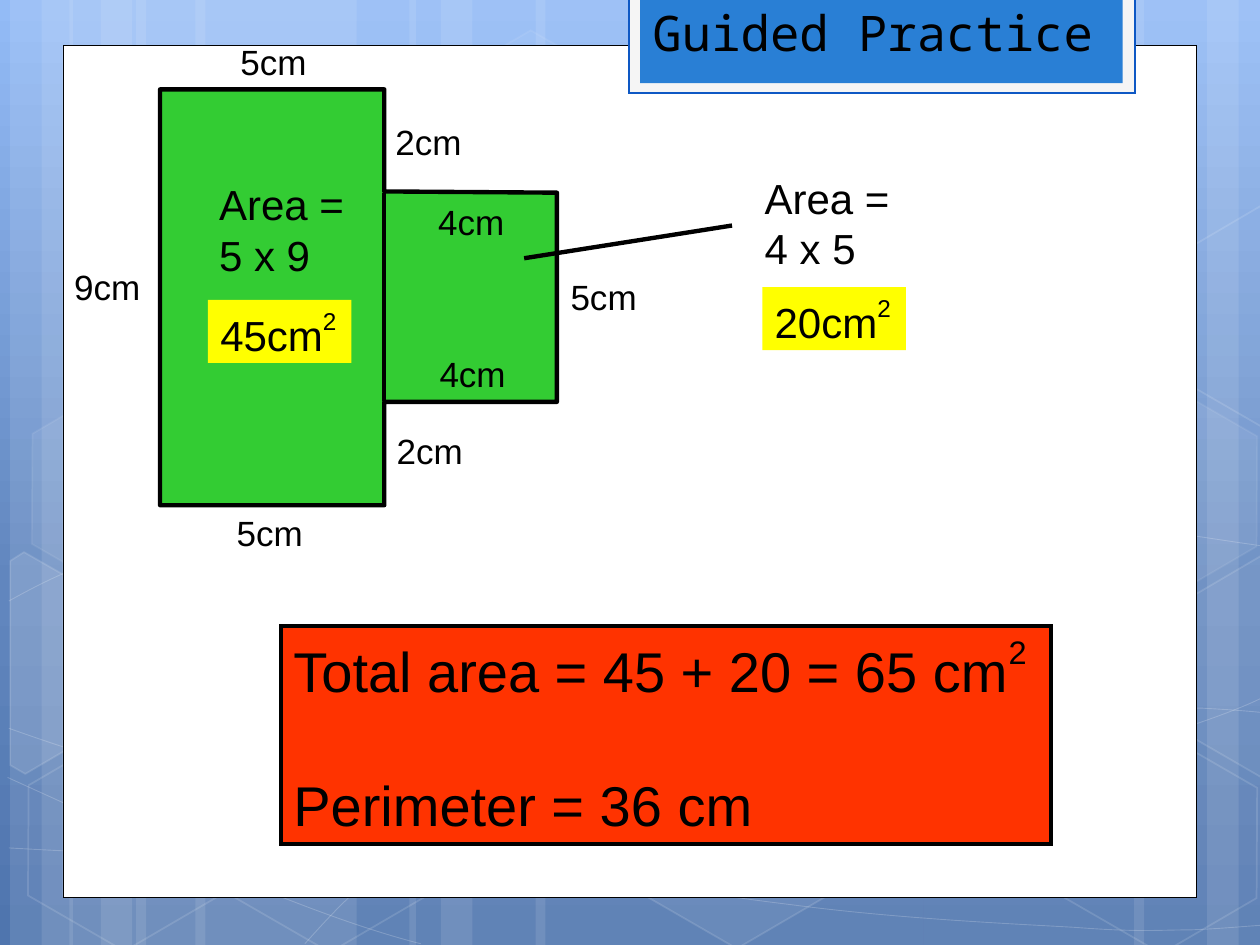
"""Build a guided practice slide on the area and perimeter of a compound figure."""
from copy import deepcopy
from math import cos, radians, sin

from lxml import etree
from pptx import Presentation
from pptx import util as u
from pptx.dml.color import RGBColor
from pptx.enum import shapes, text
from pptx.oxml.ns import qn

WHITE = RGBColor(0xFF, 0xFF, 0xFF)
BLACK = RGBColor(0, 0, 0)
PALE = RGBColor(0xF5, 0xF5, 0xF5)
EDGE_BLUE = RGBColor(0x0E, 0x58, 0xC4)
TITLE_BLUE = RGBColor(0x29, 0x7F, 0xD5)
GREEN = RGBColor(0x33, 0xCC, 0x33)
YELLOW = RGBColor(0xFF, 0xFF, 0)
RED = RGBColor(0xFF, 0x33, 0)
SKY = [(0, RGBColor(0x93, 0xBB, 0xF6)), (0.62, RGBColor(0x61, 0x86, 0xBE)),
       (1, RGBColor(0x4F, 0x75, 0xAE))]

BANDS = [(1.08, 1.75, 0), (0.08, 0.5, 0), (0.33, 0.83, 0), (1.55, 1.75, 0), (0.55, 0.5, 0),
         (0.8, 0.83, 0), (7.33, 1.75, 180), (9.58, 0.5, 180), (9, 0.83, 180),
         (4.25, 3.08, 0), (3.25, 0.5, 0), (3.5, 0.83, 0)]
WAVES = [
    [(0.07, 6.73), (0.61, 6.76), (1.15, 6.79), (1.9, 6.78), (2.65, 6.77), (3.58, 6.75),
     (4.58, 6.65), (5.58, 6.55), (7, 6.36), (7.92, 6.17), (8.83, 5.98), (9.77, 5.68),
     (10.07, 5.51)],
    [(0.07, 4.77), (0.36, 4.61), (0.65, 4.46), (1.21, 4.31), (1.78, 4.16), (2.59, 3.94),
     (3.47, 3.87), (4.36, 3.8), (5.44, 3.79), (6.54, 3.87), (7.64, 3.95), (9.47, 4.26),
     (10.07, 4.34)],
    [(0.06, 6.17), (1.27, 6.72), (2.47, 7.27), (3.34, 7.49)],
    [(0.07, 5.78), (0.38, 5.89), (0.7, 6), (1.28, 6.16), (1.86, 6.31), (2.73, 6.56),
     (3.57, 6.73), (4.4, 6.9), (5.45, 7.08), (6.28, 7.18), (7.11, 7.29), (8, 7.33),
     (8.53, 7.36), (9.05, 7.4), (9.19, 7.38), (9.45, 7.38), (9.71, 7.37), (9.89, 7.35),
     (10.07, 7.34)],
    [(2.42, 7.49), (2.6, 7.29), (2.78, 7.09), (3.02, 6.91), (3.26, 6.73), (3.6, 6.53),
     (3.88, 6.39), (4.16, 6.25), (4.33, 6.19), (4.7, 6.09), (5.06, 5.99), (5.73, 5.85),
     (6.08, 5.78), (6.44, 5.71), (6.49, 5.71), (6.8, 5.69), (7.11, 5.66), (7.6, 5.63),
     (7.94, 5.62), (8.29, 5.61), (8.86, 5.62), (8.86, 5.62), (9.08, 5.62), (9.31, 5.62),
     (9.53, 5.62), (9.71, 5.63), (9.88, 5.64), (10.06, 5.66)],
]
HEXAGONS = [(3.34, 0.36, 4, 8), (4.97, 5.89, 6, 12), (0.11, 5.91, None, 12),
            (0.14, 3.12, 7, 8), (1.74, 5.92, None, 12), (7.53, 4.53, 10, 12),
            (8.34, 5.93, None, 12), (8.34, 3.14, 7, 8)]
CUT_HEXAGONS = [
    ([(0.08, 4.45), (0.19, 4.38), (0.96, 4.82), (0.95, 5.7), (0.2, 6.14), (0.08, 6.07)],
     (0.36, 5.35), 10),
    ([(9.26, 4.85), (10.01, 4.41), (10.09, 4.46), (10.09, 6.13), (10.02, 6.17),
      (9.26, 5.73)], (9.85, 5.2), 4),
    ([(9.26, 2.07), (10.01, 1.63), (10.1, 1.68), (10.09, 3.35), (10.02, 3.39),
      (9.26, 2.95)], (9.85, 2.41), None),
]
FIGURE = [(1.27, 0.71), (1.27, 4.01), (3.05, 4.01), (3.05, 3.19), (4.42, 3.19),
          (4.42, 1.53), (3.05, 1.52), (3.05, 0.71)]
SIDES = [("9cm", 0.49, 2.06), ("5cm", 1.81, 0.27), ("5cm", 1.78, 4.01), ("2cm", 3.05, 3.36),
         ("4cm", 3.39, 2.75), ("5cm", 4.43, 2.14), ("4cm", 3.38, 1.54), ("2cm", 3.04, 0.91)]
AREAS = [("5 x 9", "45cm", (1.64, 1.37), (1.65, 2.38)),
         ("4 x 5", "20cm", (5.97, 1.32), (6.05, 2.28))]


def write(frame, lines, size=20, font="Arial", gap=0, wrap=False, inset=0.05):
    """Fill a frame with lines, raising whatever follows a caret."""
    frame.word_wrap = wrap
    frame.auto_size = text.MSO_AUTO_SIZE.NONE
    frame.vertical_anchor = text.MSO_ANCHOR.TOP
    frame.margin_top = u.Inches(inset)
    for i, line in enumerate(lines):
        row = frame.add_paragraph() if i else frame.paragraphs[0]
        row.alignment = text.PP_ALIGN.LEFT
        row.space_before = u.Pt(gap if i else 0)
        for raised, part in enumerate(line.split("^")):
            run = row.add_run()
            run.text = part
            run.font.size, run.font.name = u.Pt(size), font
            run.font.color.rgb = BLACK
            if raised:
                run.font._element.set("baseline", "50000")


def turn(points, center, degrees):
    """Turn points clockwise about a center."""
    c, s = cos(radians(degrees)), sin(radians(degrees))
    cx, cy = center
    return [(cx + (x - cx) * c - (y - cy) * s, cy + (x - cx) * s + (y - cy) * c)
            for x, y in points]


class Board:
    """The current slide and the style of its elements."""

    def __init__(self, slide):
        self.slide, self.items = slide, slide.shapes

    def backdrop(self, stops):
        fill = self.slide.background.fill
        fill.gradient()
        fill.gradient_angle = 270
        first = next(self.slide.element.iter(qn("a:gs")))
        first.addnext(deepcopy(first))
        for stop, (position, color) in zip(fill.gradient_stops, stops):
            stop.position, stop.color.rgb = position, color

    def paint(self, item, fill=None, line=None, width=1, fill_alpha=100, line_alpha=100):
        item.shadow.inherit = False
        for part, color, alpha in ((item.fill, fill, fill_alpha),
                                   (item.line.fill, line, line_alpha)):
            if color is None:
                part.background()
                continue
            part.solid()
            part.fore_color.rgb = color
            if alpha < 100:
                tint = part._xPr.find(qn("a:solidFill"))[0]
                etree.SubElement(tint, qn("a:alpha")).set("val", str(alpha * 1000))
        if line is not None:
            item.line.width = u.Pt(width)
        return item

    def shape(self, x, y, w, h, kind=shapes.MSO_SHAPE.RECTANGLE, **style):
        item = self.items.add_shape(kind, *map(u.Inches, (x, y, w, h)))
        self.paint(item, **style)
        etree.SubElement(item.element.spPr.find(qn("a:ln")), qn("a:miter")).set("lim", "800000")
        return item

    def hexagon(self, x, y, **style):
        item = self.shape(x, y, 1.75, 1.52, shapes.MSO_SHAPE.HEXAGON, **style)
        item.adjustments[0] = 0.285
        item.rotation = 30

    def outline(self, points, close=True, **style):
        start, *rest = [(u.Inches(x), u.Inches(y)) for x, y in points]
        builder = self.items.build_freeform(*start)
        builder.add_line_segments(rest, close=close)
        return self.paint(builder.convert_to_shape(), **style)

    def wave(self, points, **style):
        item = self.outline(points, close=False, **style)
        steps = list(item.element.iter(qn("a:lnTo")))
        for i in range(0, len(steps), 3):
            curve = etree.Element(qn("a:cubicBezTo"))
            steps[i].addprevious(curve)
            for step in steps[i:i + 3]:
                curve.append(step[0])
                step.getparent().remove(step)

    def line(self, *ends):
        item = self.items.add_connector(shapes.MSO_CONNECTOR.STRAIGHT, *map(u.Inches, ends))
        item.line.color.rgb, item.line.width = BLACK, u.Pt(2.5)
        etree.SubElement(item.element.spPr, qn("a:effectLst"))

    def label(self, lines, x, y, w, h, **style):
        write(self.items.add_textbox(*map(u.Inches, (x, y, w, h))).text_frame, lines, **style)

    def title(self, words, x, y, w, h):
        item = self.items.title
        item.left, item.top, item.width, item.height = map(u.Inches, (x, y, w, h))
        write(item.text_frame, [words], size=28, font="Noto Sans Mono", wrap=True, inset=0.02)
        item.element.getparent().append(item.element)


def main():
    deck = Presentation()
    deck.slide_width, deck.slide_height = u.Inches(10), u.Inches(7.5)
    board = Board(deck.slides.add_slide(deck.slide_layouts[5]))

    board.backdrop(SKY)
    for x, w, angle in BANDS:
        board.shape(x, 0, w, 7.5, fill=WHITE, fill_alpha=10).rotation = angle
    for wave in WAVES:
        board.wave(wave, line=WHITE, width=0.5, line_alpha=20)
    for x, y, tint, edge in HEXAGONS:
        board.hexagon(x, y, fill=WHITE if tint else None, fill_alpha=tint or 100,
                      line=WHITE, line_alpha=edge)
    for corners, center, tint in CUT_HEXAGONS:
        board.outline(turn(corners, center, -30), fill=WHITE if tint else None,
                      fill_alpha=tint or 100, line=WHITE, line_alpha=12).rotation = 30
    board.shape(0.5, 0.36, 9, 6.76, fill=WHITE, line=BLACK, width=0.5)
    board.shape(4.99, -0.02, 4.02, 0.76, fill=PALE, line=EDGE_BLUE, width=1.25)
    board.shape(5.08, -0.02, 3.83, 0.68, fill=TITLE_BLUE)

    board.outline(FIGURE, fill=GREEN, line=BLACK, width=2.5)
    for side, x, y in SIDES:
        board.label([side], x, y, 0.73, 0.43)
    board.line(3.05, 1.53, 3.05, 3.18)
    for product, result, formula_at, result_at in AREAS:
        board.label(["Area =", product], *formula_at, 1.19, 0.9, size=24)
        answer = board.shape(*result_at, 1.14, 0.5, fill=YELLOW)
        write(answer.text_frame, [result + "^2"], size=24)
    total = board.shape(2.23, 4.97, 6.11, 1.73, fill=RED, line=BLACK, width=2.5)
    write(total.text_frame, ["Total area = 45 + 20 = 65 cm^2", "Perimeter = 36 cm"],
          size=32, gap=38)
    board.line(4.16, 2.05, 5.81, 1.79)
    board.title("Guided Practice", 5.08, 0, 4, 0.67)
    deck.save("out.pptx")


if __name__ == "__main__":
    main()
